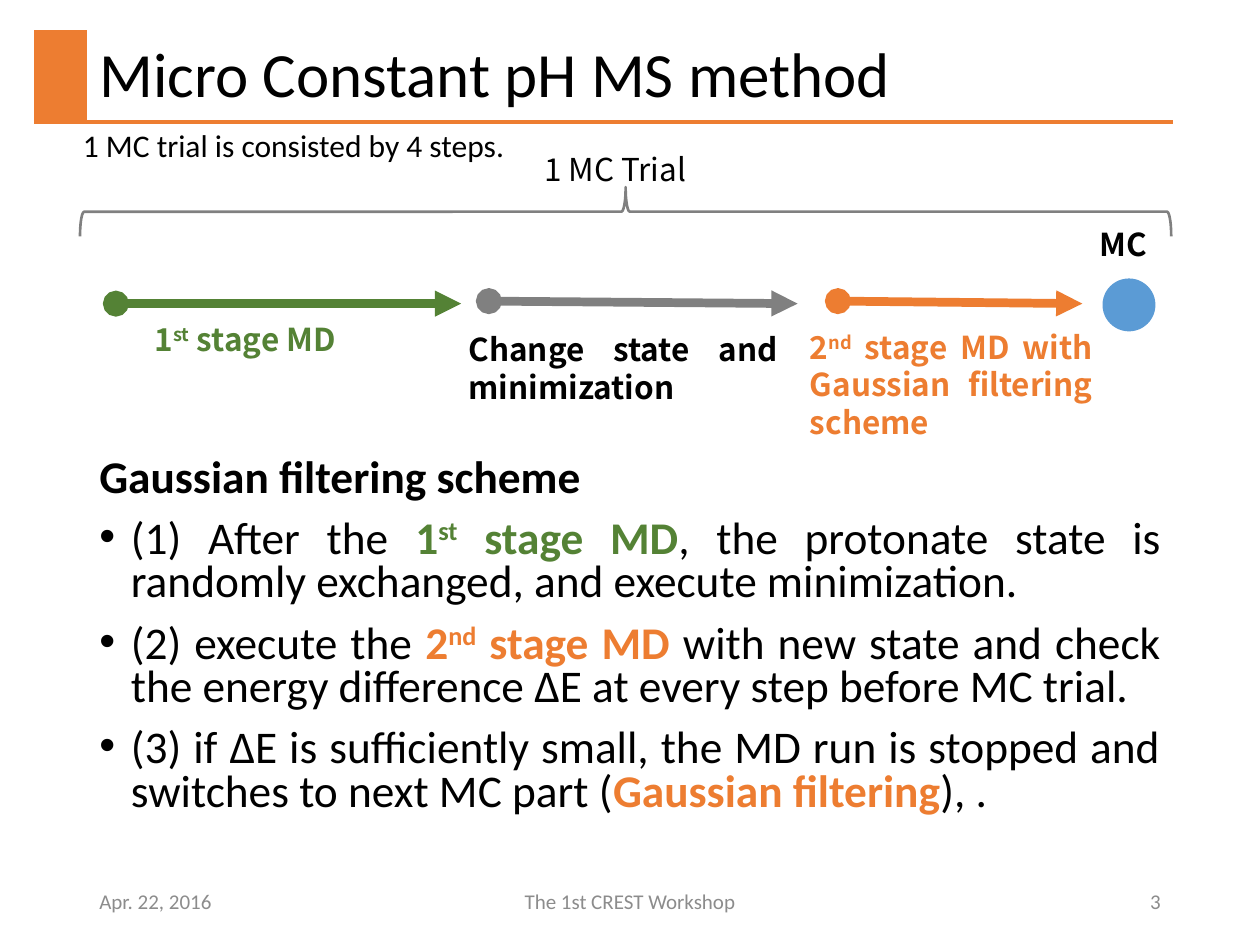
from dataclasses import dataclass

from lxml import etree
from pptx import Presentation
from pptx.dml.color import RGBColor
from pptx.enum.shapes import MSO_CONNECTOR, MSO_SHAPE
from pptx.enum.text import MSO_ANCHOR, PP_ALIGN
from pptx.oxml.ns import qn
from pptx.util import Inches, Pt

LEFT, CENTER, RIGHT, JUSTIFY = PP_ALIGN.LEFT, PP_ALIGN.CENTER, PP_ALIGN.RIGHT, PP_ALIGN.JUSTIFY
TOP, MIDDLE = MSO_ANCHOR.TOP, MSO_ANCHOR.MIDDLE


@dataclass(frozen=True)
class Theme:
    black: str = "000000"
    green: str = "548235"
    orange: str = "ED7D31"
    gray: str = "808080"
    blue: str = "5B9BD5"
    muted: str = "8C8C8C"
    text_font: str = "Calibri"
    diagram_font: str = "Noto Sans CJK JP"
    title: float = 36
    body: float = 25.9
    label: float = 18
    footer: float = 12


theme = Theme()
prs = Presentation()
prs.slide_width, prs.slide_height = Inches(10), Inches(7.5)
slide = prs.slides.add_slide(prs.slide_layouts[6])


def add_text(box, paragraphs, size, font=theme.text_font, align=LEFT, anchor=TOP):
    frame = slide.shapes.add_textbox(*map(Inches, box)).text_frame
    frame.word_wrap = True
    frame.vertical_anchor = anchor
    for index, runs in enumerate(paragraphs):
        paragraph = frame.paragraphs[0] if index == 0 else frame.add_paragraph()
        paragraph.alignment = align
        for text, color, bold, *baseline in runs:
            run = paragraph.add_run()
            run.text = text
            run.font.name = font
            run.font.size = Pt(size)
            run.font.bold = bold
            run.font.color.rgb = RGBColor.from_string(color)
            if baseline:
                run.font._element.set("baseline", str(baseline[0] * 1000))
    return frame


def add_line(start, end, color, width, arrow=False):
    line = slide.shapes.add_connector(MSO_CONNECTOR.STRAIGHT, *map(Inches, start + end))
    line.line.color.rgb = RGBColor.from_string(color)
    line.line.width = Pt(width)
    if arrow:
        outline = line.line._get_or_add_ln()
        etree.SubElement(outline, qn("a:headEnd"), type="oval")
        etree.SubElement(outline, qn("a:tailEnd"), type="triangle")
    etree.SubElement(line._element.spPr, qn("a:effectLst"))


title = add_text((0.69, 0.24, 8.62, 0.74), [[("Micro Constant pH MS method", theme.black, False)]],
                 theme.title, anchor=MIDDLE)
title.paragraphs[0].line_spacing = 0.9

first_stage = [("1", theme.green, True), ("st", theme.green, True, 30),
               (" stage MD", theme.green, True)]
second_stage = [("2", theme.orange, True), ("nd", theme.orange, True, 30)]
scheme_steps = [
    [("Gaussian filtering scheme", theme.black, True)],
    [("(1) After the ", theme.black, False), *first_stage,
     (", the protonate state is randomly exchanged, and execute minimization.",
      theme.black, False)],
    [("(2) execute the ", theme.black, False), *second_stage,
     (" stage MD", theme.orange, True),
     (" with new state and check the energy difference ∆E at every step before MC trial.",
      theme.black, False)],
    [("(3) if ∆E is sufficiently small, the MD run is stopped and switches to next MC part (",
      theme.black, False),
     ("Gaussian filtering", theme.orange, True), ("), .", theme.black, False)],
]
scheme = add_text((0.69, 3.59, 8.62, 3.17), scheme_steps, theme.body, align=JUSTIFY)
for index, paragraph in enumerate(scheme.paragraphs):
    paragraph.line_spacing = 0.8
    paragraph.space_before = Pt(10)
    if index:
        properties = paragraph._p.get_or_add_pPr()
        properties.set("marL", str(Inches(0.25)))
        properties.set("indent", str(-Inches(0.25)))
        etree.SubElement(properties, qn("a:buFont"), typeface="Arial")
        etree.SubElement(properties, qn("a:buChar"), char="•")

for left, width, text, align in [
    (0.69, 2.25, "Apr. 22, 2016", LEFT),
    (3.31, 3.38, "The 1st CREST Workshop", CENTER),
    (7.06, 2.25, "3", RIGHT),
]:
    add_text((left, 6.95, width, 0.4), [[(text, theme.muted, False)]],
             theme.footer, align=align, anchor=MIDDLE)

for preset, box, fill in [
    (MSO_SHAPE.RECTANGLE, (0.27, 0.24, 0.42, 0.74), theme.orange),
    (MSO_SHAPE.OVAL, (8.75, 2.21, 0.42, 0.42), theme.blue),
]:
    marker = slide.shapes.add_shape(preset, *map(Inches, box))
    marker.shadow.inherit = False
    marker.fill.solid()
    marker.fill.fore_color.rgb = RGBColor.from_string(fill)
    marker.line.fill.background()

trial_brace = slide.shapes.add_shape(
    MSO_SHAPE.LEFT_BRACE, *map(Inches, (4.77, -2.65, 0.39, 8.66)))
trial_brace.rotation = 90
trial_brace.shadow.inherit = False
trial_brace.fill.background()
trial_brace.line.color.rgb = RGBColor.from_string(theme.gray)
trial_brace.line.width = Pt(1.5)

add_line((0.27, 0.97), (9.31, 0.97), theme.orange, 2)
for start, end, color in [
    ((0.92, 2.41), (3.66, 2.41), theme.green),
    ((3.88, 2.39), (6.33, 2.41), theme.gray),
    ((6.65, 2.39), (8.59, 2.41), theme.orange),
]:
    add_line(start, end, color, 5, arrow=True)

for box, runs in [
    ((4.22, 1.14, 1.45, 0.4), [("1 MC Trial", theme.black, False)]),
    ((1.13, 2.49, 2.69, 0.4), first_stage),
    ((3.62, 2.57, 2.65, 0.71), [("Change state and minimization", theme.black, True)]),
    ((6.33, 2.55, 2.44, 1.01),
     [*second_stage, (" stage MD with Gaussian filtering scheme", theme.orange, True)]),
    ((8.63, 1.74, 0.64, 0.4), [("MC", theme.black, True)]),
]:
    add_text(box, [runs], theme.label, theme.diagram_font, JUSTIFY)

add_text((0.56, 0.95, 8.92, 0.4),
         [[("1 MC trial is consisted by 4 steps.", theme.black, False)]], theme.label)

prs.save("out.pptx")
